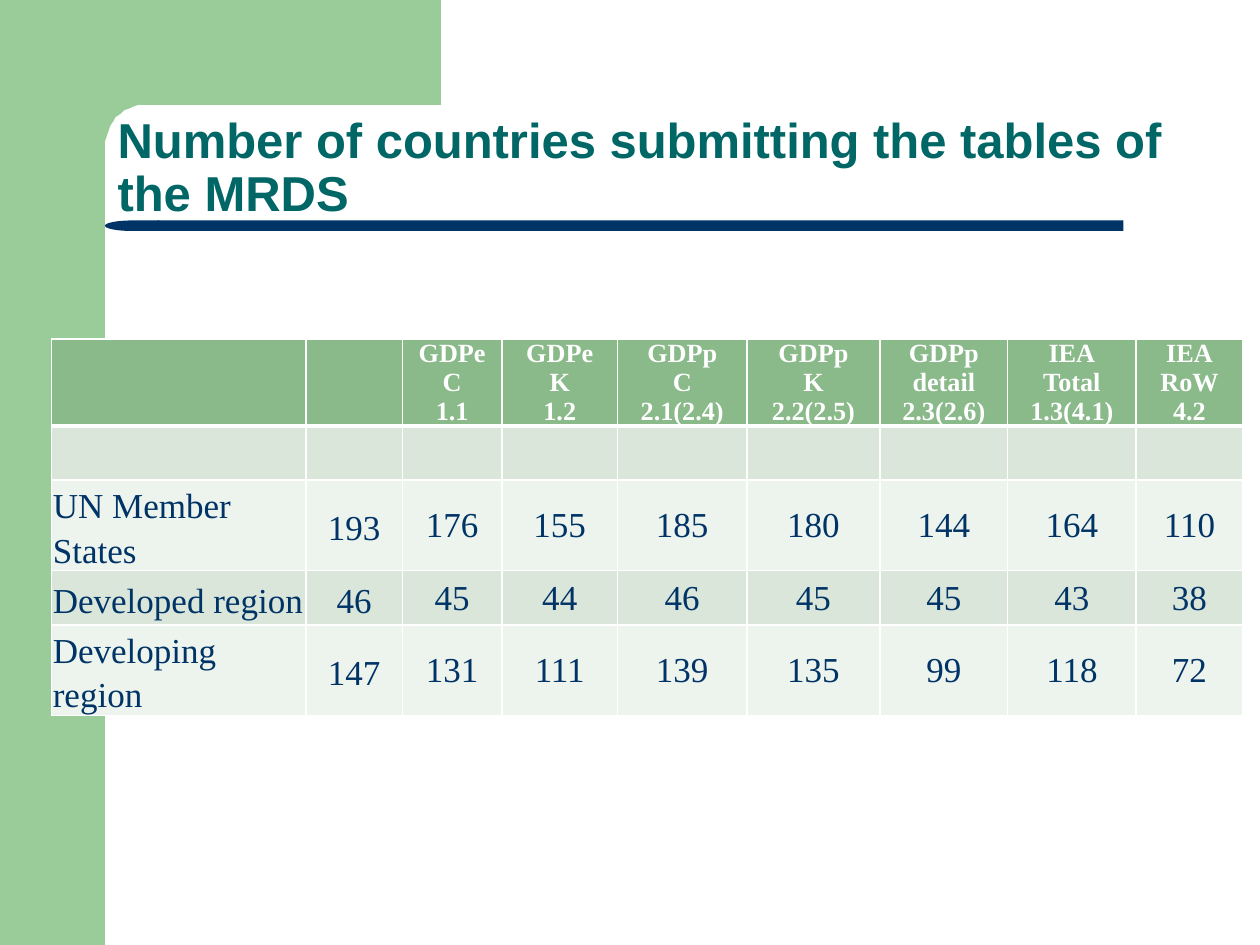
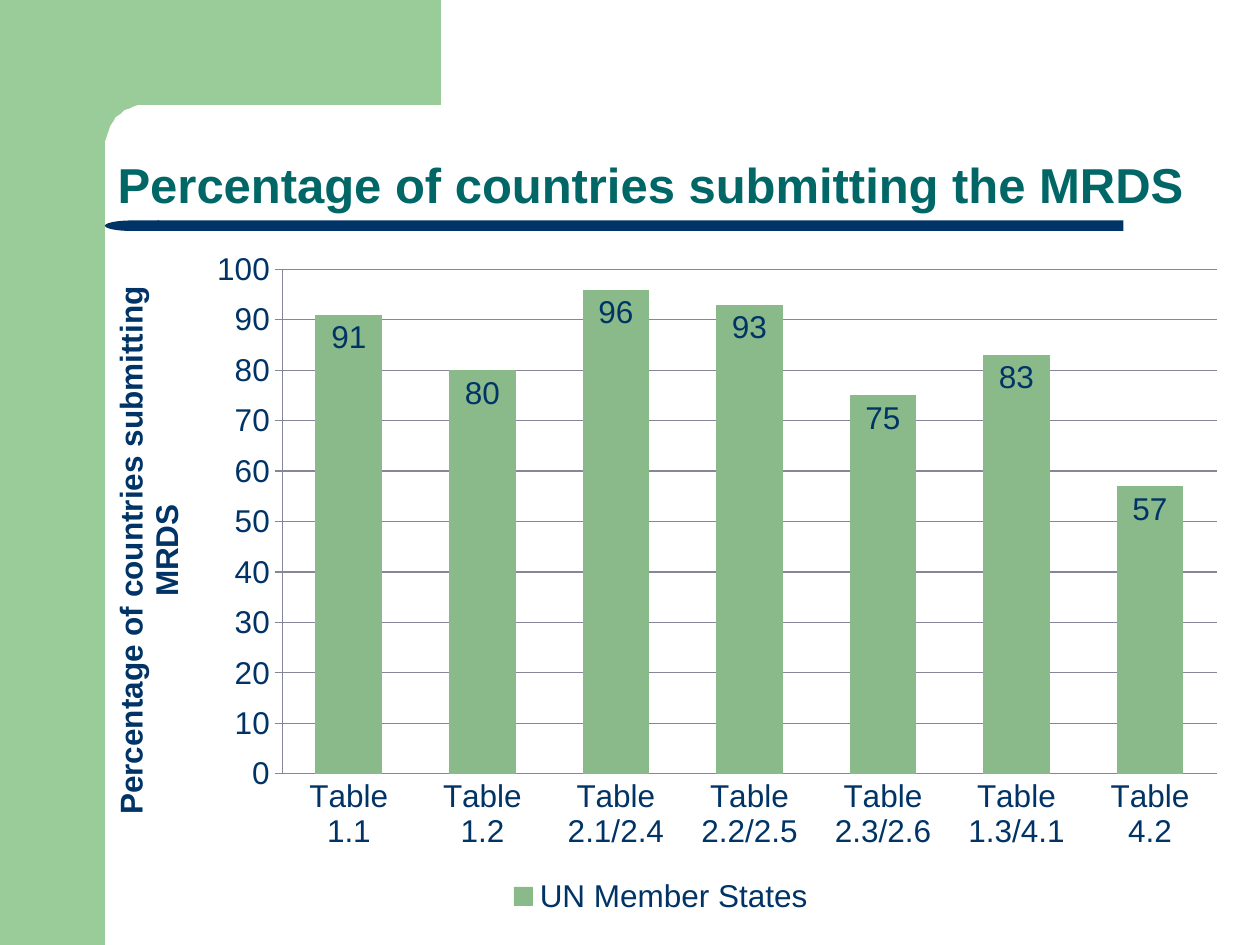
from math import cos, pi, sin

from lxml import etree
from pptx import Presentation
from pptx.chart.data import CategoryChartData
from pptx.dml.color import RGBColor
from pptx.enum.chart import XL_CHART_TYPE, XL_LABEL_POSITION, XL_LEGEND_POSITION, XL_TICK_MARK
from pptx.enum.shapes import MSO_SHAPE
from pptx.enum.text import MSO_ANCHOR, MSO_AUTO_SIZE, PP_ALIGN
from pptx.oxml.ns import qn
from pptx.util import Pt

COLUMNS = XL_CHART_TYPE.COLUMN_CLUSTERED
INSIDE_END = XL_LABEL_POSITION.INSIDE_END
LEGEND_BOTTOM = XL_LEGEND_POSITION.BOTTOM
TICK_NONE, TICK_OUT = XL_TICK_MARK.NONE, XL_TICK_MARK.OUTSIDE
RECT, ROUND_END = MSO_SHAPE.RECTANGLE, MSO_SHAPE.FLOWCHART_DELAY
MIDDLE, BOTTOM = MSO_ANCHOR.MIDDLE, MSO_ANCHOR.BOTTOM
LEFT, CENTER = PP_ALIGN.LEFT, PP_ALIGN.CENTER
NO_AUTOFIT = MSO_AUTO_SIZE.NONE

COLORS = {
    name: RGBColor.from_string(value)
    for name, value in {
        "band": "99CC99",
        "navy": "003366",
        "title": "006666",
        "header": "8AB98A",
        "dark_row": "DAE6DA",
        "light_row": "EDF3ED",
        "white": "FFFFFF",
        "grid": "868699",
    }.items()
}


def paint(shape, color):
    shape.shadow.inherit = False
    shape.fill.solid()
    shape.fill.fore_color.rgb = COLORS[color]
    shape.line.fill.background()


def set_borders(cell, top, bottom):
    properties = cell._tc.get_or_add_tcPr()
    for index, (side, width) in enumerate([("L", 1), ("R", 1), ("T", top), ("B", bottom)]):
        line = etree.Element(qn(f"a:ln{side}"), w=str(Pt(width)))
        fill = etree.SubElement(line, qn("a:solidFill"))
        etree.SubElement(fill, qn("a:srgbClr"), val=str(COLORS["white"]))
        properties.insert(index, line)


prs = Presentation()
prs.slide_width, prs.slide_height = Pt(720), Pt(540)
layout = prs.slide_layouts[5]
counts_slide = prs.slides.add_slide(layout)
share_slide = prs.slides.add_slide(layout)

shapes = counts_slide.shapes
side_band = shapes.add_shape(RECT, 0, 0, Pt(60), Pt(540))
corner = [
    (82 - 22 * sin(step * pi / 24), 84 - 24 * cos(step * pi / 24)) for step in range(13)
]
outline = shapes.build_freeform(252, 0, scale=Pt(1))
outline.add_line_segments([(252, 60), *corner, (60, 92), (36, 92), (36, 0)], close=True)
top_band = outline.convert_to_shape()
title_rule = shapes.add_shape(RECT, Pt(90), Pt(126), Pt(552), Pt(6))
rule_end = shapes.add_shape(ROUND_END, Pt(60), Pt(126), Pt(31), Pt(6))
rule_end._element.spPr.get_or_add_xfrm().set("flipH", "1")

backdrop = [(side_band, "band"), (top_band, "band"), (title_rule, "navy"), (rule_end, "navy")]
for position, (part, color) in enumerate(backdrop, start=2):
    paint(part, color)
    layout.shapes._spTree.insert(position, part._element)

titles = [
    (counts_slide, "Number of countries submitting the tables of the MRDS", 40.3, 624),
    (share_slide, "Percentage of countries submitting the MRDS", 36, 654),
]
for slide, wording, top, width in titles:
    title = slide.shapes.title
    title.left, title.top, title.width, title.height = Pt(60), Pt(top), Pt(width), Pt(90)
    frame = title.text_frame
    frame.text = wording
    frame.word_wrap = True
    frame.auto_size = NO_AUTOFIT
    frame.vertical_anchor = BOTTOM
    heading = frame.paragraphs[0]
    heading.alignment = LEFT
    heading.line_spacing = 0.9
    heading.font.name = "Arial"
    heading.font.size = Pt(28)
    heading.font.bold = True
    heading.font.color.rgb = COLORS["title"]

rows = [
    ["", "", "GDPe\nC\n1.1", "GDPe\nK\n1.2", "GDPp\vC\n2.1(2.4)", "GDPp\vK\n2.2(2.5)",
     "GDPp detail 2.3(2.6)", "IEA\nTotal\n1.3(4.1)", "IEA\nRoW\n4.2"],
    [""] * 9,
    ["UN Member States", 193, 176, 155, 185, 180, 144, 164, 110],
    ["Developed region", 46, 45, 44, 46, 45, 45, 43, 38],
    ["Developing region", 147, 131, 111, 139, 135, 99, 118, 72],
]
column_widths = [145.4, 55, 57, 66, 74, 76, 73, 73.4, 61]
counts = shapes.add_table(
    len(rows), len(column_widths), Pt(29.5), Pt(193.7), Pt(sum(column_widths)), Pt(155)
).table
for column, width in zip(counts.columns, column_widths):
    column.width = Pt(width)

for r, values in enumerate(rows):
    is_header = r == 0
    row_color = "header" if is_header else "dark_row" if r % 2 else "light_row"
    for c, value in enumerate(values):
        cell = counts.cell(r, c)
        cell.fill.solid()
        cell.fill.fore_color.rgb = COLORS[row_color]
        set_borders(cell, 3 if r == 1 else 1, 3 if is_header else 1)
        if value == "":
            continue
        cell.vertical_anchor = MIDDLE
        cell.margin_left = cell.margin_right = cell.margin_top = Pt(0 if is_header else 0.7)
        cell.margin_bottom = 0
        cell.text_frame.text = str(value)
        for paragraph in cell.text_frame.paragraphs:
            paragraph.alignment = LEFT if c == 0 else CENTER
            if c < 2:
                paragraph.line_spacing = 1.15
            paragraph.font.name = "Times New Roman"
            paragraph.font.size = Pt(15 if is_header else 20)
            paragraph.font.bold = is_header
            paragraph.font.color.rgb = COLORS["white" if is_header else "navy"]

shares = CategoryChartData()
shares.categories = [
    f"Table {number}"
    for number in ["1.1", "1.2", "2.1/2.4", "2.2/2.5", "2.3/2.6", "1.3/4.1", "4.2"]
]
shares.add_series("UN Member States", [91, 80, 96, 93, 75, 83, 57])
chart = share_slide.shapes.add_chart(
    COLUMNS, Pt(46.8), Pt(136), Pt(661.7), Pt(390), shares
).chart
chart.has_title = False
chart.font.name = "Arial"
chart.font.size = Pt(18)
chart.font.color.rgb = COLORS["navy"]
chart.has_legend = True
chart.legend.position = LEGEND_BOTTOM
chart.legend.include_in_layout = False

plot = chart.plots[0]
plot.gap_width = 100
plot.vary_by_categories = False
plot.has_data_labels = True
plot.data_labels.show_value = True
plot.data_labels.position = INSIDE_END
bars = plot.series[0].format
bars.fill.solid()
bars.fill.fore_color.rgb = COLORS["header"]

percent_axis = chart.value_axis
percent_axis.minimum_scale, percent_axis.maximum_scale = 0, 100
percent_axis.major_unit = 10
percent_axis.major_tick_mark = TICK_OUT
percent_axis.has_major_gridlines = True
chart.category_axis.major_tick_mark = TICK_NONE
for lines in (percent_axis, percent_axis.major_gridlines, chart.category_axis):
    lines.format.line.color.rgb = COLORS["grid"]
    lines.format.line.width = Pt(0.75)

axis_frame = percent_axis.axis_title.text_frame
axis_frame.text = "Percentage of countries submitting MRDS"
axis_font = axis_frame.paragraphs[0].font
axis_font.name = "Arial"
axis_font.size = Pt(18)
axis_font.bold = True
axis_font.color.rgb = COLORS["navy"]

prs.save("out.pptx")
